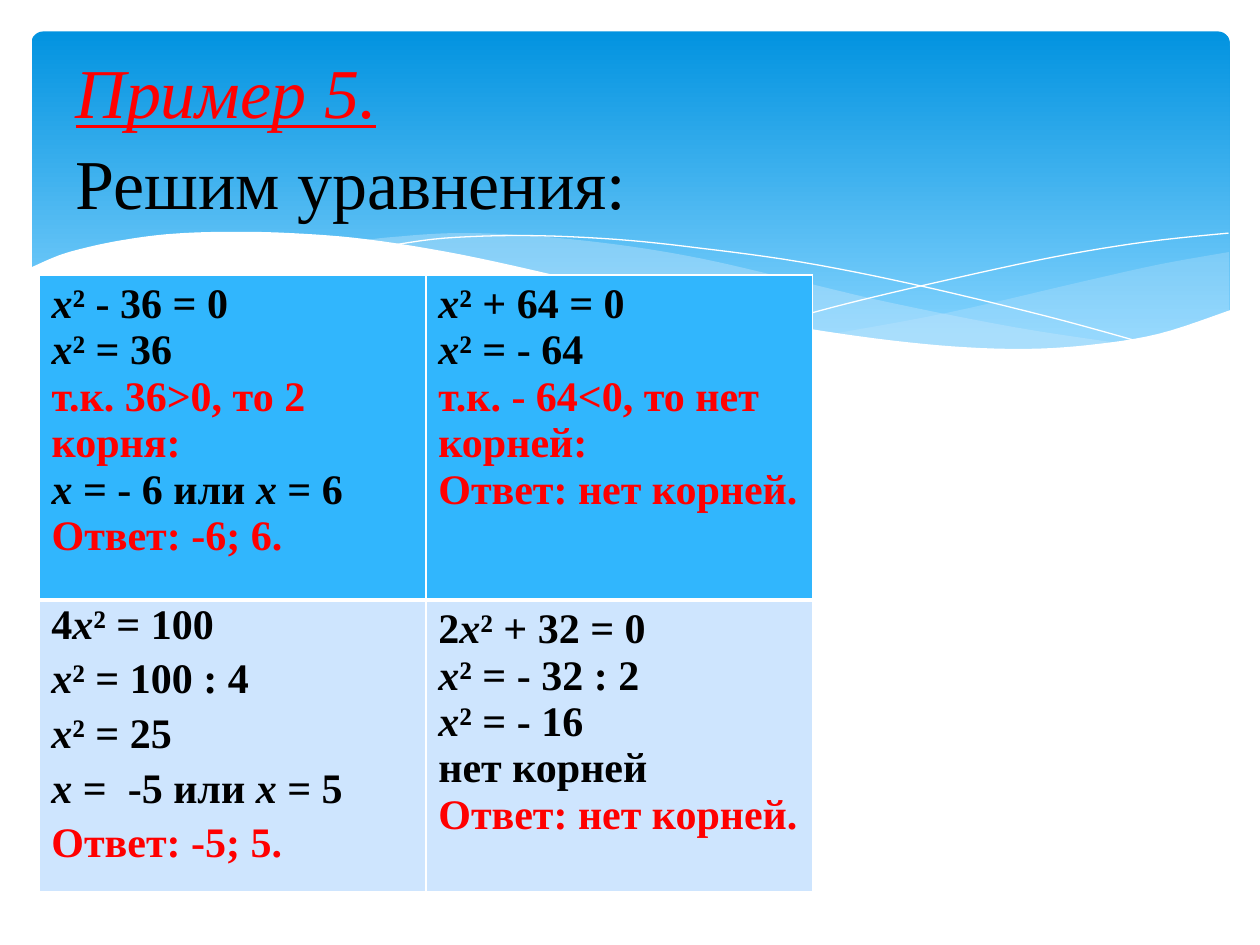
import pptx
import pptx.util
import pptx.dml.color
import pptx.enum.shapes
import pptx.enum.text
import pptx.oxml
import pptx.oxml.ns

Pt = pptx.util.Pt
RGBColor = pptx.dml.color.RGBColor
qn = pptx.oxml.ns.qn

WHITE = RGBColor(0xFF, 0xFF, 0xFF)
BLACK = RGBColor(0, 0, 0)
RED = RGBColor(0xFF, 0, 0)
SKY_TOP = RGBColor(0x02, 0x93, 0xE0)
SKY_BOTTOM = RGBColor(0x83, 0xD3, 0xFE)
MIST = RGBColor(0xC6, 0xE7, 0xFC)
ROW_FILLS = [RGBColor(0x31, 0xB6, 0xFD), RGBColor(0xCE, 0xE5, 0xFE)]
FONT = "Times New Roman"

TITLE = [
    ("Пример 5.", {"italic": True, "underline": True}, RED),
    ("Решим уравнения:", {"italic": False, "underline": False}, BLACK),
]
EQUATIONS = [
    [
        [("x² - 36 = 0", BLACK), ("x² = 36", BLACK), ("т.к. 36>0, то 2 корня:", RED),
         ("x = - 6 или x = 6", BLACK), ("Ответ: -6; 6.", RED)],
        [("x² + 64 = 0", BLACK), ("x² = - 64", BLACK),
         ("т.к. - 64<0, то нет корней:", RED), ("Ответ: нет корней.", RED)],
    ],
    [
        [],
        [("2x² + 32 = 0", BLACK), ("x² = - 32 : 2", BLACK), ("x² = - 16", BLACK),
         ("нет корней", BLACK), ("Ответ: нет корней.", RED)],
    ],
]
LOWER_LEFT = [("4x² = 100", BLACK), ("x² = 100 : 4", BLACK), ("x² = 25", BLACK),
              ("x =  -5 или x = 5", BLACK), ("Ответ: -5; 5.", RED)]

TABLE_LEFT, TABLE_TOP = 22.3, 157
COLUMN_WIDTH = 221
ROW_HEIGHTS = [185.8, 167]

WAVES = [
    {"fill": MIST, "opacity": 29, "curves": [
        [(702.5, 144), (663, 151), (620, 160.6), (542, 178.6), (476, 190.8)],
        [(476, 190.8), (518, 195.8), (554, 199.4), (586, 200.2), (621, 198),
         (663, 190.8), (702.5, 177.8)]]},
    {"fill": MIST, "opacity": 40, "curves": [
        [(643, 196.6), (581, 187.2), (508, 172.8), (453, 159.8), (400, 147.6),
         (352, 139.7), (302, 134.6), (260, 133.2), (225, 135.4), (206, 137.5)],
        [(206, 137.5), (261, 146.2), (323, 159.8), (408, 178.6), (468, 190),
         (520, 197.3), (565, 200.2), (603, 200.2), (643, 196.6)]]},
    {"line": WHITE, "curves": [
        [(222.5, 140.4), (254, 136.1), (300, 134.6), (352, 136.8), (400, 141.8),
         (458, 149.8), (523, 162.7), (598, 180.7), (653, 195.8)]]},
    {"line": WHITE, "curves": [
        [(441.4, 185), (484, 173.5), (538.6, 160.6), (602, 146.9), (655, 138.2),
         (702, 133.2)]]},
    {"fill": WHITE, "curves": [
        [(703.4, 177.1), (662, 190.8), (621, 197.3), (582, 199.4), (536, 197.3),
         (481, 190.8), (417, 180), (362, 167.8), (322, 158.4), (263, 145.4),
         (210, 136.8), (166, 133.2), (127, 132.5), (95, 133.9), (68.4, 137.5),
         (48, 141.8), (33, 146.2), (16.6, 153.4)],
        [(16.6, 236.9), (703.4, 236.9)]]},
]


def smooth(points, steps=6):
    padded = [points[0], *points, points[-1]]
    result = [points[0]]
    for before, start, end, after in zip(padded, padded[1:], padded[2:], padded[3:]):
        for step in range(1, steps + 1):
            t = step / steps
            result.append(tuple(
                0.5 * (2 * b + (c - a) * t + (2 * a - 5 * b + 4 * c - d) * t ** 2
                       + (3 * b - a - 3 * c + d) * t ** 3)
                for a, b, c, d in zip(before, start, end, after)))
    return result


def apply(target, formats):
    for name, value in formats.items():
        setattr(target, name, value)


def add_wave(page, wave):
    points = [(Pt(x), Pt(y)) for curve in wave["curves"] for x, y in smooth(curve)]
    builder = page.shapes.build_freeform(*points[0])
    builder.add_line_segments(points[1:], close="fill" in wave)
    shape = builder.convert_to_shape()
    shape.shadow.inherit = False
    if "fill" in wave:
        shape.fill.solid()
        shape.fill.fore_color.rgb = wave["fill"]
        shape.line.fill.background()
    else:
        shape.fill.background()
        shape.line.color.rgb = wave["line"]
        shape.line.width = Pt(0)
    if "opacity" in wave:
        color = shape.element.spPr.find(qn("a:solidFill"))[0]
        color.append(pptx.oxml.parse_xml(
            f'<a:alpha {pptx.oxml.ns.nsdecls("a")} val="{wave["opacity"] * 1000}"/>'))


def add_span(para, text, formats, color):
    span = para.add_run()
    span.text = text
    apply(span.font, {"name": FONT, **formats})
    span.font.color.rgb = color


def write_equations(frame, lines, before=0):
    for index, (text, color) in enumerate(lines):
        para = frame.add_paragraph() if index else frame.paragraphs[0]
        para.space_before = Pt(before)
        for part in text.replace("x", "|x|").split("|"):
            if part:
                add_span(para, part, {"size": Pt(24), "bold": True, "italic": part == "x"}, color)


def add_border(cell, side, width):
    cell._tc.get_or_add_tcPr().append(pptx.oxml.parse_xml(
        f'<a:{side} {pptx.oxml.ns.nsdecls("a")} w="{Pt(width)}">'
        f'<a:solidFill><a:srgbClr val="{WHITE}"/></a:solidFill></a:{side}>'))


def add_equation_table(page):
    table = page.shapes.add_table(2, 2, Pt(TABLE_LEFT), Pt(TABLE_TOP),
                                  Pt(2 * COLUMN_WIDTH), Pt(sum(ROW_HEIGHTS))).table
    for column in table.columns:
        column.width = Pt(COLUMN_WIDTH)
    for index, height in enumerate(ROW_HEIGHTS):
        table.rows[index].height = Pt(height)
        for cell, lines in zip(table.rows[index].cells, EQUATIONS[index]):
            for side in ("lnL", "lnR", "lnT", "lnB"):
                divider = side == ("lnT" if index else "lnB")
                add_border(cell, side, 3 if divider else 1)
            cell.fill.solid()
            cell.fill.fore_color.rgb = ROW_FILLS[index]
            write_equations(cell.text_frame, lines)


def add_title(page):
    title = page.shapes.title
    title.element.getparent().append(title.element)
    apply(title, {"left": Pt(36), "top": Pt(26.6), "width": Pt(648), "height": Pt(98.6)})
    apply(title.text_frame, {"vertical_anchor": pptx.enum.text.MSO_ANCHOR.MIDDLE,
                             "auto_size": pptx.enum.text.MSO_AUTO_SIZE.NONE,
                             "word_wrap": True})
    para = title.text_frame.paragraphs[0]
    apply(para, {"alignment": pptx.enum.text.PP_ALIGN.LEFT, "line_spacing": 1.08})
    for index, (text, formats, color) in enumerate(TITLE):
        if index:
            para.add_line_break()
        add_span(para, text, {"size": Pt(40), **formats}, color)


def main():
    deck = pptx.Presentation()
    apply(deck, {"slide_width": Pt(720), "slide_height": Pt(540)})
    page = deck.slides.add_slide(deck.slide_layouts[5])

    banner = page.shapes.add_shape(pptx.enum.shapes.MSO_SHAPE.ROUNDED_RECTANGLE,
                                   Pt(18), Pt(18), Pt(684.7), Pt(194.4))
    banner.adjustments[0] = 0.034
    banner.shadow.inherit = False
    banner.line.fill.background()
    banner.fill.gradient()
    banner.fill.gradient_angle = 270
    stops = [(0, SKY_TOP), (0.9, SKY_BOTTOM)]
    for stop, (position, color) in zip(banner.fill.gradient_stops, stops):
        stop.position = position
        stop.color.rgb = color

    for wave in WAVES:
        add_wave(page, wave)
    add_title(page)
    add_equation_table(page)

    box = page.shapes.add_textbox(Pt(TABLE_LEFT), Pt(337.7), Pt(203), Pt(152.6))
    box.text_frame.word_wrap = True
    write_equations(box.text_frame, LOWER_LEFT, before=2.4)
    deck.save("out.pptx")


if __name__ == "__main__":
    main()
